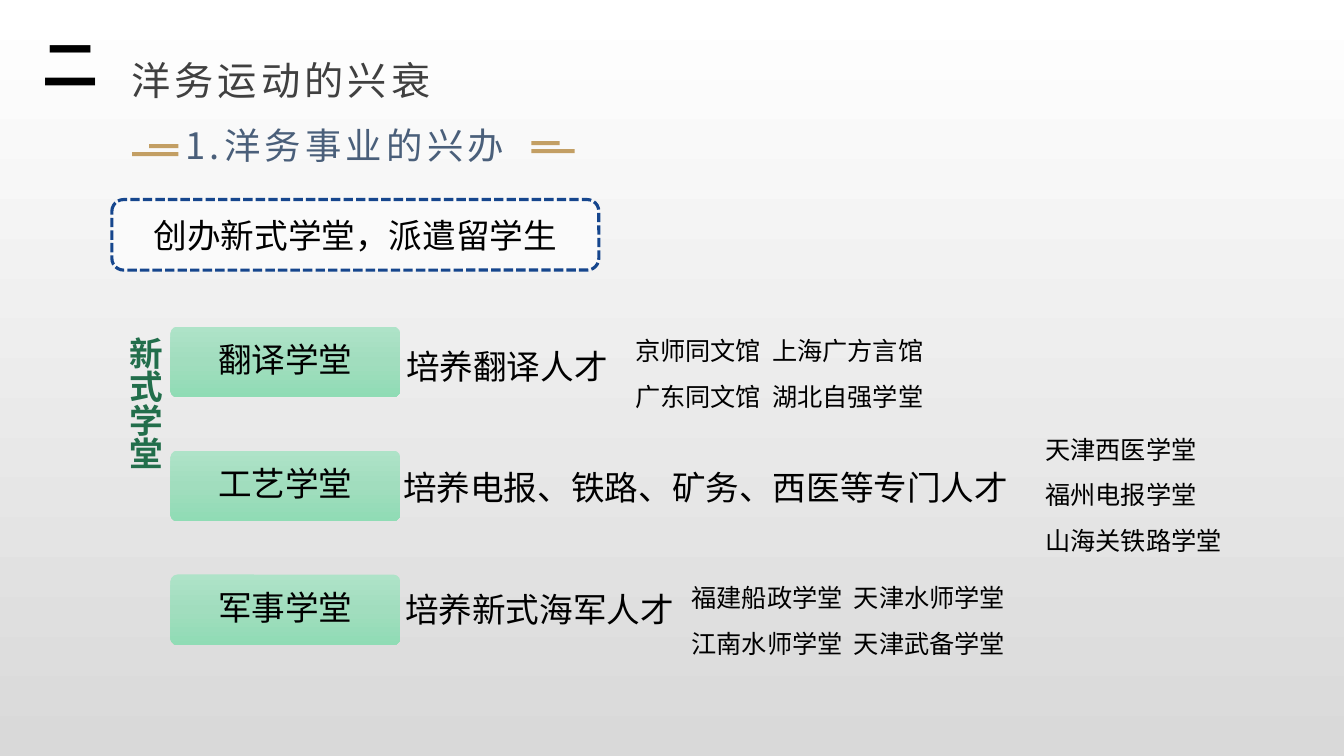
from lxml.etree import SubElement
from copy import deepcopy
from pptx import Presentation
from pptx.dml.color import RGBColor
from pptx.enum.dml import MSO_LINE
from pptx.enum.shapes import MSO_SHAPE as Shape
from pptx.enum.text import MSO_ANCHOR as Anchor, MSO_AUTO_SIZE as AutoSize, PP_ALIGN as Align
from pptx.oxml.ns import qn
from pptx.util import Inches, Pt

BLACK = RGBColor(0, 0, 0)
WHITE = RGBColor(255, 255, 255)
GRAY = RGBColor(0xD9, 0xD9, 0xD9)
CHARCOAL = RGBColor(0x40, 0x40, 0x40)
SLATE = RGBColor(0x4A, 0x5F, 0x7A)
GOLD = RGBColor(0xC3, 0x9F, 0x64)
NAVY = RGBColor(0x16, 0x46, 0x8D)
FOREST = RGBColor(0x22, 0x6E, 0x4B)
MINT_LIGHT = RGBColor(0xAE, 0xE3, 0xC8)
MINT = RGBColor(0xA1, 0xDD, 0xBE)
MINT_DARK = RGBColor(0x90, 0xDC, 0xB5)
CJK = "Noto Sans CJK SC"

SCHOOLS = [
    ("翻译学堂", "培养翻译人才", (3.93, 3.38, 2.36, 0.5),
     ["京师同文馆\t上海广方言馆", "广东同文馆\t湖北自强学堂"], (6.2, 3.13, 4.07, 0.94), 1.36),
    ("工艺学堂", "培养电报、铁路、矿务、西医等专门人才", (3.9, 4.58, 6.71, 0.5),
     ["天津西医学堂", "福州电报学堂", "山海关铁路学堂"], (10.27, 4.11, 1.97, 1.39), None),
    ("军事学堂", "培养新式海军人才", (3.92, 5.79, 6.71, 0.5),
     ["福建船政学堂\t天津水师学堂", "江南水师学堂\t天津武备学堂"], (6.76, 5.58, 3.75, 0.94), 1.61),
]
GOLD_BARS = [(5.27, 1.48, 0.43), (5.27, 1.4, 0.28), (1.31, 1.51, 0.46), (1.48, 1.43, 0.29)]


def apply(target, values):
    for name, value in values.items():
        setattr(target, name, value)


def write(box, lines, size=24, color=BLACK, face=CJK, bold=False, tracking=0, tab=None,
          frame_format=None, para_format=None):
    frame = box.text_frame
    apply(frame, {"word_wrap": True, **(frame_format or {})})
    for index, line in enumerate(lines):
        para = frame.add_paragraph() if index else frame.paragraphs[0]
        if tab:
            stops = SubElement(para._p.get_or_add_pPr(), qn("a:tabLst"))
            SubElement(stops, qn("a:tab"), pos=str(Inches(tab)), algn="l")
        apply(para, {"alignment": Align.LEFT, "space_before": Pt(0), **(para_format or {})})
        span = para.add_run()
        span.text = line
        apply(span.font, {"size": Pt(size), "name": face, "bold": bold})
        span.font.color.rgb = color
        properties = span.font._element
        SubElement(properties, qn("a:ea"), typeface=face)
        if tracking:
            properties.set("spc", str(tracking * 100))


def add_text(page, area, lines, **options):
    box = page.shapes.add_textbox(*map(Inches, area))
    write(box, lines, **options)
    box.text_frame.auto_size = AutoSize.SHAPE_TO_FIT_TEXT
    return box


def add_block(page, kind, area, color=None):
    block = page.shapes.add_shape(kind, *map(Inches, area))
    block.shadow.inherit = False
    block.line.fill.background()
    if color is not None:
        block.fill.solid()
        block.fill.fore_color.rgb = color
    return block


def shade(fill, first, last):
    fill.gradient()
    fill.gradient_angle = 270
    for stop, position, color in zip(fill.gradient_stops, (0, 1), (first, last)):
        stop.position = position
        stop.color.rgb = color


def add_title(page):
    title = page.shapes.title
    apply(title, dict(zip(("left", "top", "width", "height"), map(Inches, (1.2, 0.42, 10.27, 0.59)))))
    write(title, ["洋务运动的兴衰"], size=28, color=CHARCOAL, tracking=3,
          frame_format={"vertical_anchor": Anchor.TOP, "auto_size": AutoSize.NONE},
          para_format={"line_spacing": Pt(40)})


def add_topic(page):
    topic = add_block(page, Shape.ROUNDED_RECTANGLE, (1.11, 1.98, 4.83, 0.7), WHITE)
    tint = topic.element.spPr.find(qn("a:solidFill"))[0]
    SubElement(tint, qn("a:alpha"), val="62000")
    topic.line.color.rgb = NAVY
    apply(topic.line, {"width": Pt(2.25), "dash_style": MSO_LINE.SQUARE_DOT})
    write(topic, ["创办新式学堂，派遣留学生"], frame_format={"vertical_anchor": Anchor.MIDDLE},
          para_format={"alignment": Align.CENTER})


def add_school_label(page, top, name):
    label = add_block(page, Shape.ROUNDED_RECTANGLE, (1.69, top, 2.28, 0.7))
    label.adjustments[0] = 0.1
    shade(label.fill, MINT_LIGHT, MINT_DARK)
    stops = label.element.spPr.find(qn("a:gradFill")).find(qn("a:gsLst"))
    stops.insert(1, deepcopy(stops[0]))
    middle = label.fill.gradient_stops[1]
    middle.position = 0.5
    middle.color.rgb = MINT
    margins = ("margin_left", "margin_top", "margin_right", "margin_bottom")
    write(label, [name],
          frame_format={"vertical_anchor": Anchor.MIDDLE, **dict.fromkeys(margins, Inches(0.01))},
          para_format={"alignment": Align.CENTER, "line_spacing": 0.9})


def main():
    deck = Presentation()
    apply(deck, {"slide_width": Inches(13.33), "slide_height": Inches(7.5)})
    page = deck.slides.add_slide(deck.slide_layouts[5])
    shade(page.background.fill, WHITE, GRAY)
    add_title(page)
    add_text(page, (0.32, 0.24, 0.6, 0.77), ["二"], size=40, bold=True)
    add_text(page, (1.74, 1.05, 7.19, 0.58), ["1.洋务事业的兴办"], size=26, color=SLATE,
             tracking=3, para_format={"line_spacing": Pt(40)})
    for left, top, width in GOLD_BARS:
        add_block(page, Shape.RECTANGLE, (left, top, width, 0.04), GOLD)
    add_topic(page)
    for row, (name, purpose, purpose_area, examples, examples_area, tab) in enumerate(SCHOOLS):
        add_school_label(page, 3.24 + 1.23 * row, name)
        add_text(page, purpose_area, [purpose])
        add_text(page, examples_area, examples, size=18, tab=tab, para_format={"line_spacing": 1.5})
    heading = add_text(page, (1.08, 3.24, 0.61, 3.28), ["新式学堂"], color=FOREST, face="Arial",
                       bold=True, para_format={"alignment": Align.JUSTIFY})
    heading.text_frame._txBody.bodyPr.set("vert", "eaVert")
    deck.save("out.pptx")


if __name__ == "__main__":
    main()
